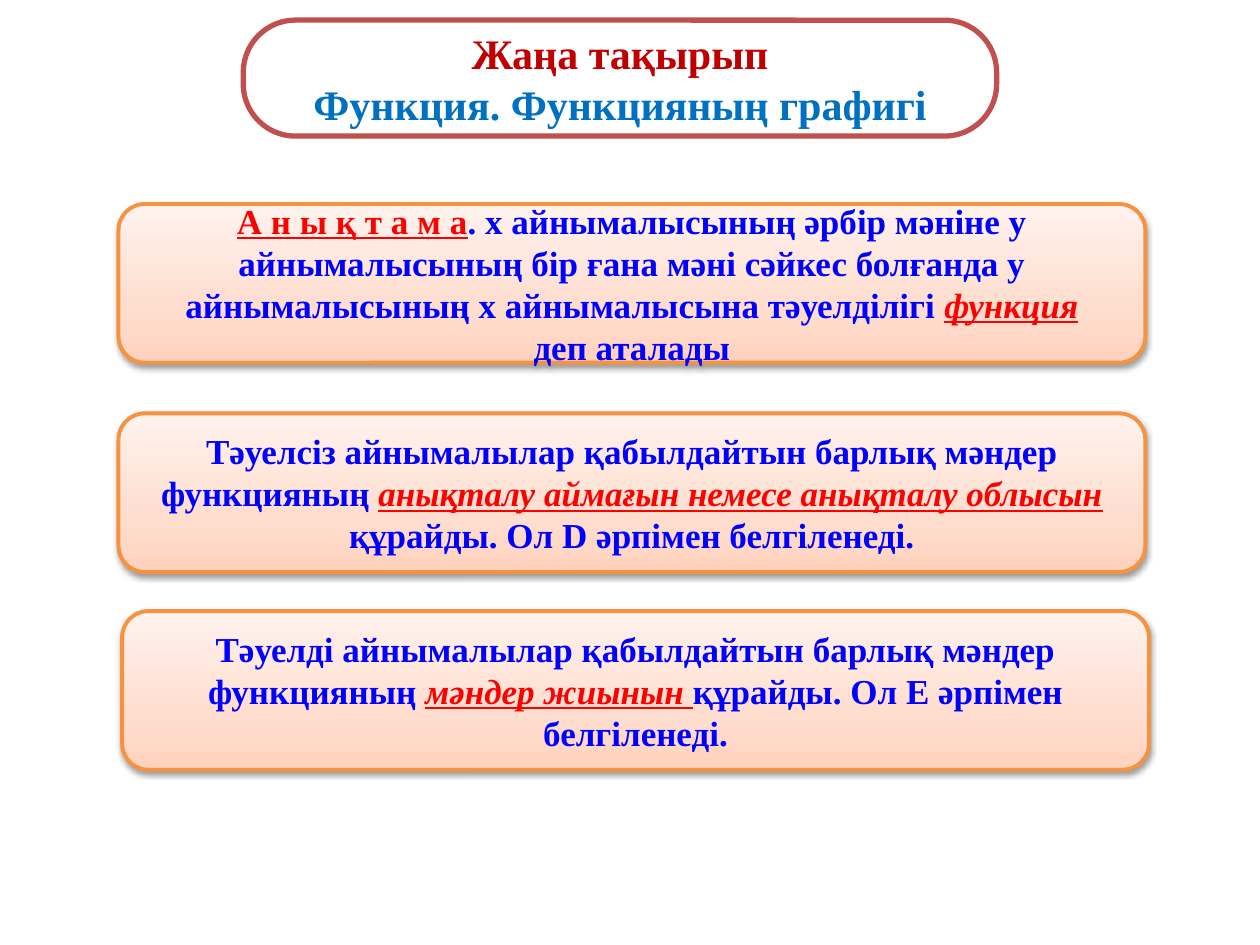
from pptx import Presentation
from pptx.dml.color import RGBColor
from pptx.enum.shapes import MSO_SHAPE
from pptx.enum.text import MSO_ANCHOR, MSO_AUTO_SIZE, PP_ALIGN
from pptx.oxml import parse_xml
from pptx.oxml.ns import nsdecls
from pptx.util import Pt

FONT = "Times New Roman"
BLUE, RED = "0000FF", "FF0000"

TITLE = [("Жаңа тақырып", "C00000"), ("Функция. Функцияның графигі", "0070C0")]
TITLE_BOX = (139, 11.5, 430.5, 66.25)

# Run styles: colour, italic, underline
PLAIN = (BLUE, False, False)
LABEL = (RED, False, True)
TERM = (RED, True, True)

# Each card: left, top, paragraphs of (text, style) runs
CARDS = [
    (67.7, 116.6, [
        [("А н ы қ т а м а", LABEL),
         (". х айнымалысының әрбір мәніне у айнымалысының бір ғана мәні сәйкес "
          "болғанда у айнымалысының х айнымалысына тәуелділігі ", PLAIN),
         ("функция", TERM)],
        [("деп аталады", PLAIN)],
    ]),
    (67.7, 236.2, [
        [("Тәуелсіз айнымалылар қабылдайтын барлық мәндер функцияның ", PLAIN),
         ("анықталу аймағын немесе анықталу облысын ", TERM),
         ("құрайды. Ол D әрпімен белгіленеді.", PLAIN)],
    ]),
    (69.8, 349.2, [
        [("Тәуелді айнымалылар қабылдайтын барлық мәндер функцияның ", PLAIN),
         ("мәндер жиынын ", TERM),
         ("құрайды. Ол Е әрпімен белгіленеді.", PLAIN)],
    ]),
]
CARD_SIZE = (586.8, 90.7)
CARD_STOPS = [(0, "FFD2BD"), (35, "FFDED0"), (100, "FFF2ED")]


def rgb(color):
    return RGBColor.from_string(color)


def add_rounded(slide, box, line_color, line_width):
    sp = slide.shapes.add_shape(MSO_SHAPE.ROUNDED_RECTANGLE, *map(Pt, box))
    sp.shadow.inherit = False
    sp.line.color.rgb = rgb(line_color)
    sp.line.width = Pt(line_width)
    return sp


def set_paragraph(p, size):
    p.alignment = PP_ALIGN.CENTER
    p.font.name = FONT
    p.font.size = Pt(size)
    p.font.bold = True


def paragraph_at(tf, index):
    return tf.add_paragraph() if index else tf.paragraphs[0]


def fill_gradient(sp):
    """Fill with the three card colours, running from bottom to top."""
    sp.fill.gradient()
    sp.fill.gradient_angle = 90
    stops = sp.fill.gradient_stops[0]._gs.getparent()
    for gs in list(stops):
        stops.remove(gs)
    for pos, color in CARD_STOPS:
        stops.append(parse_xml(
            f'<a:gs {nsdecls("a")} pos="{pos * 1000}"><a:srgbClr val="{color}"/></a:gs>'))


def add_shadow(sp):
    sp._element.spPr.find("{*}effectLst").append(parse_xml(
        f'<a:outerShdw {nsdecls("a")} blurRad="{Pt(3.1)}" dist="{Pt(1.6)}" dir="5400000" '
        'rotWithShape="0"><a:srgbClr val="000000"><a:alpha val="38000"/></a:srgbClr>'
        '</a:outerShdw>'))


def add_title(slide):
    frame = add_rounded(slide, TITLE_BOX, "C0504D", 3)
    frame.adjustments[0] = 0.45
    frame.fill.background()

    title = slide.shapes.title
    title.left, title.top, title.width, title.height = map(Pt, TITLE_BOX)
    tf = title.text_frame
    tf.auto_size = MSO_AUTO_SIZE.NONE
    tf.vertical_anchor = MSO_ANCHOR.MIDDLE
    for i, (text, color) in enumerate(TITLE):
        p = paragraph_at(tf, i)
        p.text = text
        set_paragraph(p, 24)
        p.font.color.rgb = rgb(color)


def add_card(slide, left, top, paragraphs):
    sp = add_rounded(slide, (left, top, *CARD_SIZE), "F69240", 2.25)
    fill_gradient(sp)
    add_shadow(sp)
    tf = sp.text_frame
    tf.word_wrap = True
    tf.vertical_anchor = MSO_ANCHOR.MIDDLE
    for i, runs in enumerate(paragraphs):
        p = paragraph_at(tf, i)
        set_paragraph(p, 20)
        for text, (color, italic, underline) in runs:
            r = p.add_run()
            r.text = text
            r.font.color.rgb = rgb(color)
            r.font.italic = italic
            r.font.underline = underline


def main():
    prs = Presentation()
    prs.slide_width, prs.slide_height = Pt(720), Pt(540)
    slide = prs.slides.add_slide(prs.slide_layouts[5])
    add_title(slide)
    for card in CARDS:
        add_card(slide, *card)
    prs.save("out.pptx")


if __name__ == "__main__":
    main()
